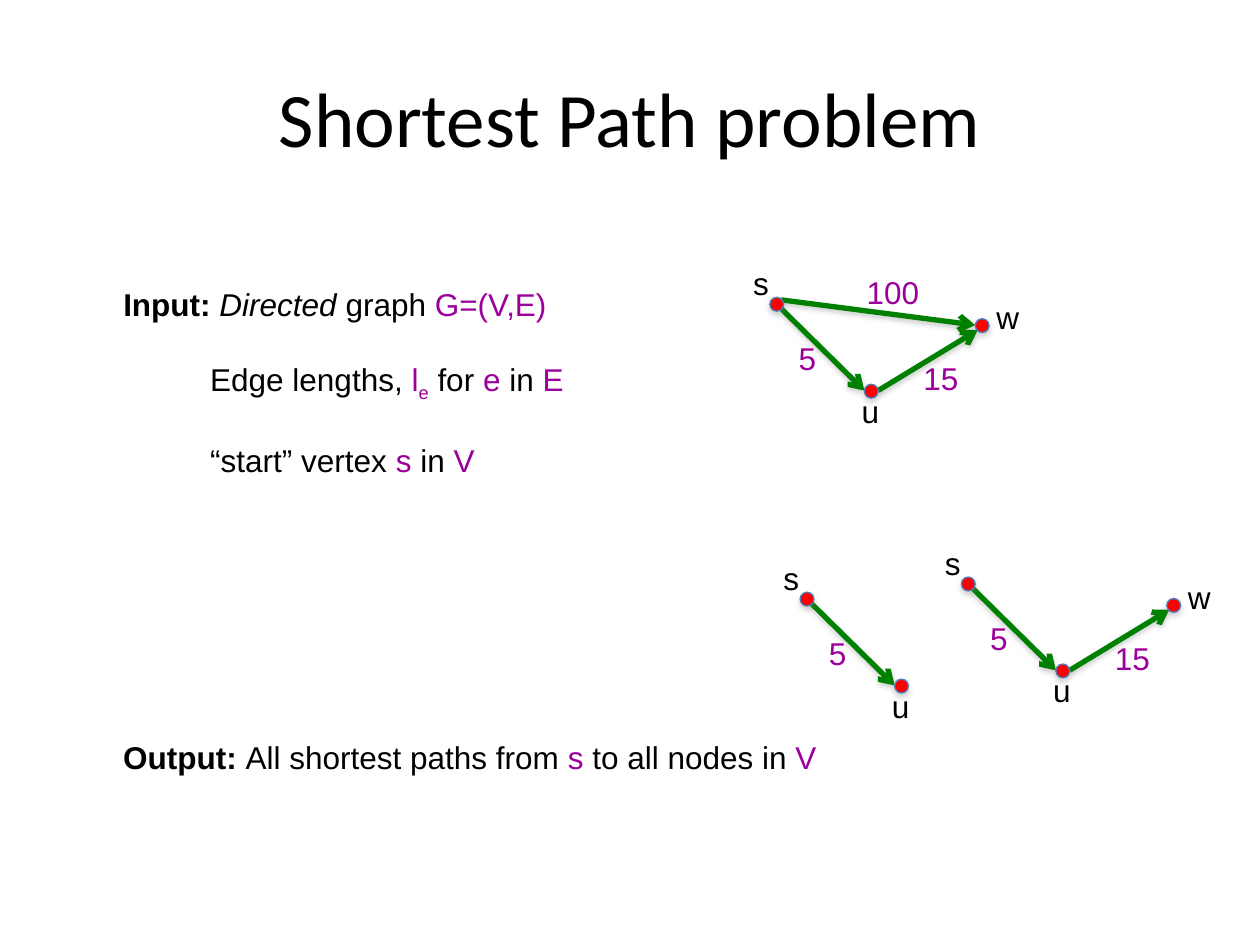
from pptx import Presentation
from pptx import util as u
from pptx.dml.color import RGBColor
from pptx.enum import shapes, text
from pptx.oxml import parse_xml
from pptx.oxml.ns import nsdecls

BLACK = RGBColor(0x00, 0x00, 0x00)
PURPLE = RGBColor(0x9C, 0x00, 0x9C)
RED = RGBColor(0xFF, 0x00, 0x00)
GREEN = RGBColor(0x00, 0x80, 0x00)
BLUE = RGBColor(0x4A, 0x7E, 0xBB)

DOT_SIZE = 0.11
# Vertex: dot offset, label offset and label width, measured from the dot of s
VERTICES = {
    "s": ((0, 0), (-0.23, -0.31), 0.33),
    "u": ((0.75, 0.69), (0.63, 0.70), 0.34),
    "w": ((1.63, 0.17), (1.70, -0.04), 0.41),
}
# Edge: start, end, length label, label offset and label size
EDGES = {
    "sw": ((0.09, 0.02), (1.63, 0.22), "100", (0.67, -0.24), (0.62, 0.4)),
    "uw": ((0.86, 0.74), (1.65, 0.26), "15", (1.12, 0.44), (0.48, 0.4)),
    "su": ((0.09, 0.09), (0.75, 0.74), "5", (0.13, 0.28), (0.31, 0.71)),
}
GRAPHS = [
    ((6.11, 2.36), "swu", ["sw", "uw", "su"]),
    ((6.35, 4.70), "su", ["su"]),
    ((7.63, 4.58), "swu", ["uw", "su"]),
]


def add_text(container, left, top, width, height, paragraphs, size=18, font="Arial"):
    """Add a text box; each paragraph is a list of (text, colour, style) runs."""
    box = container.add_textbox(*map(u.Inches, (left, top, width, height)))
    frame = box.text_frame
    frame.word_wrap = False
    for index, runs in enumerate(paragraphs):
        paragraph = frame.paragraphs[0] if index == 0 else frame.add_paragraph()
        for content, colour, style in runs:
            run = paragraph.add_run()
            run.text = content
            run.font.name = font
            run.font.size = u.Pt(size)
            run.font.color.rgb = colour
            run.font.bold = style == "bold"
            run.font.italic = style == "italic"
            if style == "subscript":
                run.font._element.set("baseline", "-25000")
    return frame


def add_shadow(shape, opacity, distance):
    shape._element.spPr.append(parse_xml(
        f'<a:effectLst {nsdecls("a")}><a:outerShdw blurRad="{u.Pt(3.1)}" '
        f'dist="{u.Pt(distance)}" dir="5400000" rotWithShape="0">'
        f'<a:srgbClr val="808080"><a:alpha val="{opacity * 1000}"/></a:srgbClr>'
        '</a:outerShdw></a:effectLst>'))


presentation = Presentation()
presentation.slide_width = u.Inches(10)
presentation.slide_height = u.Inches(7.5)
slide = presentation.slides.add_slide(presentation.slide_layouts[6])

title = add_text(slide.shapes, 0.5, 0.3, 9, 1.25,
                 [[("Shortest Path problem", BLACK, None)]], 44, "Calibri")
title.word_wrap = True
title.vertical_anchor = text.MSO_ANCHOR.MIDDLE
title.paragraphs[0].alignment = text.PP_ALIGN.CENTER

problem_input = add_text(slide.shapes, 0.88, 2.21, 3.75, 1.61, [
    [("Input: ", BLACK, "bold"), ("Directed", BLACK, "italic"),
     (" graph ", BLACK, None), ("G=(V,E)", PURPLE, None)],
    [("Edge lengths, ", BLACK, None), ("l", PURPLE, None), ("e", PURPLE, "subscript"),
     (" for ", BLACK, None), ("e", PURPLE, None), (" in ", BLACK, None),
     ("E", PURPLE, None)],
    [("“start” vertex ", BLACK, None), ("s", PURPLE, None), (" in ", BLACK, None),
     ("V", PURPLE, None)],
])
for paragraph in problem_input.paragraphs[1:]:
    paragraph.space_before = u.Pt(21.5)
    paragraph._p.get_or_add_pPr().set("marL", str(u.Inches(0.69)))

add_text(slide.shapes, 0.88, 5.81, 5.76, 0.4, [
    [("Output: ", BLACK, "bold"), ("All shortest paths from ", BLACK, None),
     ("s", PURPLE, None), (" to all nodes in ", BLACK, None), ("V", PURPLE, None)],
])

for (left, top), vertices, edges in GRAPHS:
    graph = slide.shapes.add_group_shape().shapes
    for name in edges:
        start, end, length, offset, size = EDGES[name]
        edge = graph.add_connector(
            shapes.MSO_CONNECTOR.STRAIGHT,
            u.Inches(left + start[0]), u.Inches(top + start[1]),
            u.Inches(left + end[0]), u.Inches(top + end[1]))
        edge.line.color.rgb = GREEN
        edge.line.width = u.Pt(3)
        edge.line._get_or_add_ln().append(
            parse_xml(f'<a:tailEnd {nsdecls("a")} type="arrow"/>'))
        add_shadow(edge, 38, 1.6)
        add_text(graph, left + offset[0], top + offset[1], *size,
                 [[(length, PURPLE, None)]])
    for name in vertices:
        position, offset, width = VERTICES[name]
        dot = graph.add_shape(
            shapes.MSO_SHAPE.OVAL,
            u.Inches(left + position[0]), u.Inches(top + position[1]),
            u.Inches(DOT_SIZE), u.Inches(DOT_SIZE))
        dot.fill.solid()
        dot.fill.fore_color.rgb = RED
        dot.line.color.rgb = BLUE
        dot.line.width = u.Pt(0.75)
        add_shadow(dot, 35, 1.8)
        add_text(graph, left + offset[0], top + offset[1], width, 0.4,
                 [[(name, BLACK, None)]])

presentation.save("out.pptx")
